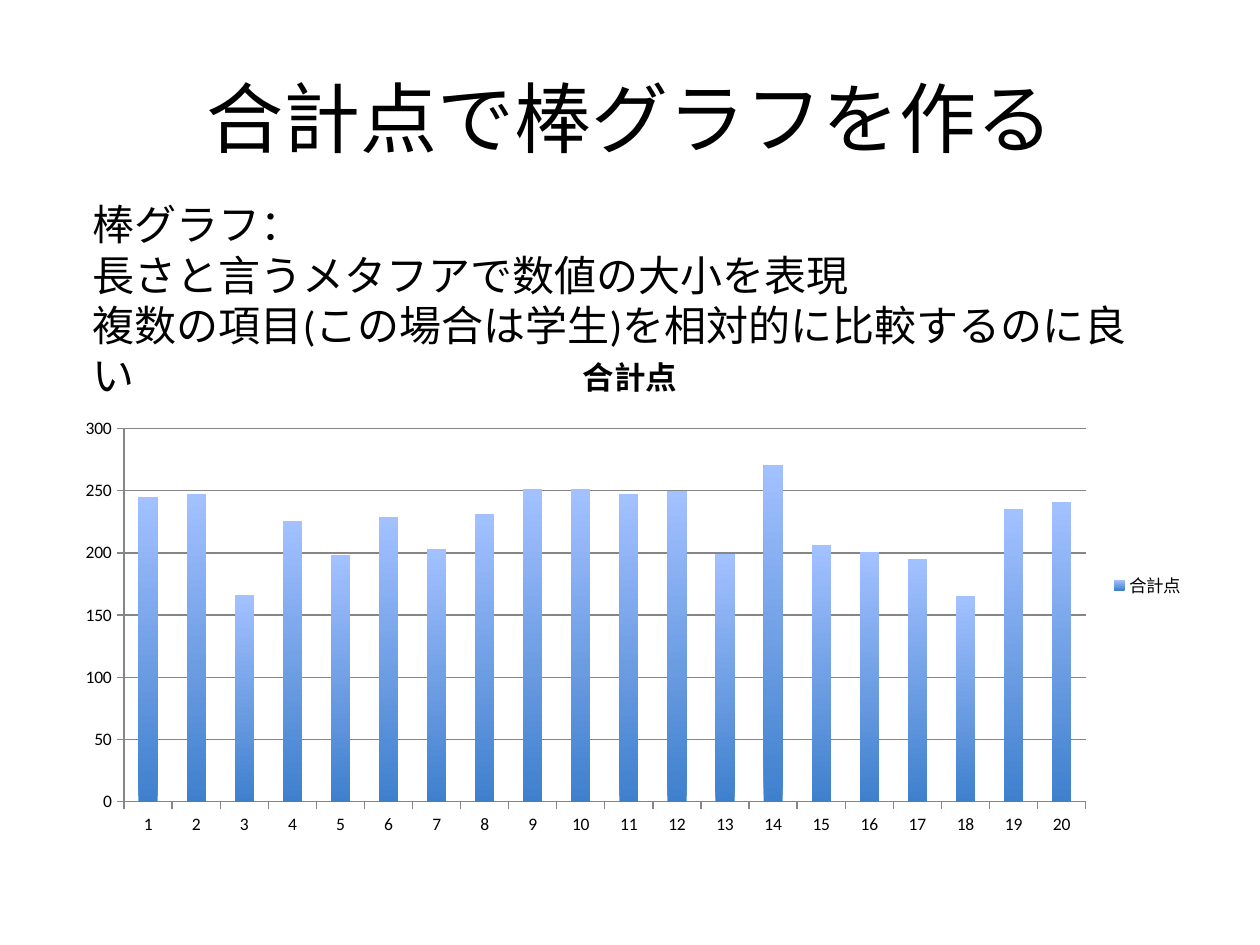
from pptx import Presentation
from pptx.chart.data import CategoryChartData
from pptx.dml.color import RGBColor
from pptx.enum.chart import XL_CHART_TYPE, XL_LEGEND_POSITION, XL_TICK_MARK
from pptx.enum.text import MSO_ANCHOR, PP_ALIGN
from pptx.util import Pt

COLUMN = XL_CHART_TYPE.COLUMN_CLUSTERED
RIGHT = XL_LEGEND_POSITION.RIGHT
OUT, NONE = XL_TICK_MARK.OUTSIDE, XL_TICK_MARK.NONE
MIDDLE, CENTER = MSO_ANCHOR.MIDDLE, PP_ALIGN.CENTER

FACE = "Calibri"
HUES = {"text": "000000", "axis": "868686", "low": "3F80CD", "high": "A3C1FF"}
NOTES = [
    "棒グラフ：",
    "長さと言うメタフアで数値の大小を表現",
    "複数の項目(この場合は学生)を相対的に比較するのに良い",
]
SCORES = [245, 247, 166, 226, 198, 229, 203, 231, 251, 251,
          247, 250, 199, 271, 206, 201, 195, 165, 235, 241]


def hue(name):
    return RGBColor.from_string(HUES[name])


def style(font, size, bold=False):
    font.name, font.size, font.bold = FACE, Pt(size), bold
    font.color.rgb = hue("text")


def add_title(slide, box, text):
    title = slide.shapes.title
    title.left, title.top, title.width, title.height = map(Pt, box)
    frame = title.text_frame
    frame.text = text
    frame.vertical_anchor = MIDDLE
    para = frame.paragraphs[0]
    para.alignment = CENTER
    style(para.font, 44)


def add_notes(slide, box, lines):
    """Place the lines of text above the chart."""
    frame = slide.shapes.add_textbox(*map(Pt, box)).text_frame
    frame.word_wrap = True
    frame.text = "\n".join(lines)
    for para in frame.paragraphs:
        style(para.font, 24)


def add_bars(slide, box, name, scores):
    data = CategoryChartData()
    data.categories = [str(n) for n in range(1, len(scores) + 1)]
    data.add_series(name, scores)
    chart = slide.shapes.add_chart(COLUMN, *map(Pt, box), data).chart
    style(chart.font, 10)

    chart.has_title = True
    head = chart.chart_title.text_frame
    head.text = name
    style(head.paragraphs[0].font, 18, True)
    chart.has_legend = True
    chart.legend.position = RIGHT
    chart.legend.include_in_layout = False

    plot = chart.plots[0]
    plot.gap_width = 150
    plot.vary_by_categories = False
    fill = plot.series[0].format.fill
    fill.gradient()
    fill.gradient_angle = 90
    for stop, key in zip(fill.gradient_stops, ("low", "high")):
        stop.color.rgb = hue(key)

    scale = chart.value_axis
    scale.minimum_scale, scale.maximum_scale, scale.major_unit = 0, 300, 50
    scale.has_major_gridlines = True
    for axis in (chart.category_axis, scale):
        axis.major_tick_mark, axis.minor_tick_mark = OUT, NONE
    for part in (chart.category_axis, scale, scale.major_gridlines):
        part.format.line.color.rgb = hue("axis")
        part.format.line.width = Pt(0.75)


def main():
    deck = Presentation()
    deck.slide_width, deck.slide_height = Pt(720), Pt(540)
    slide = deck.slides.add_slide(deck.slide_layouts[5])
    add_title(slide, (36, 21.6, 648, 90), "合計点で棒グラフを作る")
    add_bars(slide, (36, 186.5, 648, 296), "合計点", SCORES)
    add_notes(slide, (46, 110, 618.5, 94.5), NOTES)
    deck.save("out.pptx")


if __name__ == "__main__":
    main()
